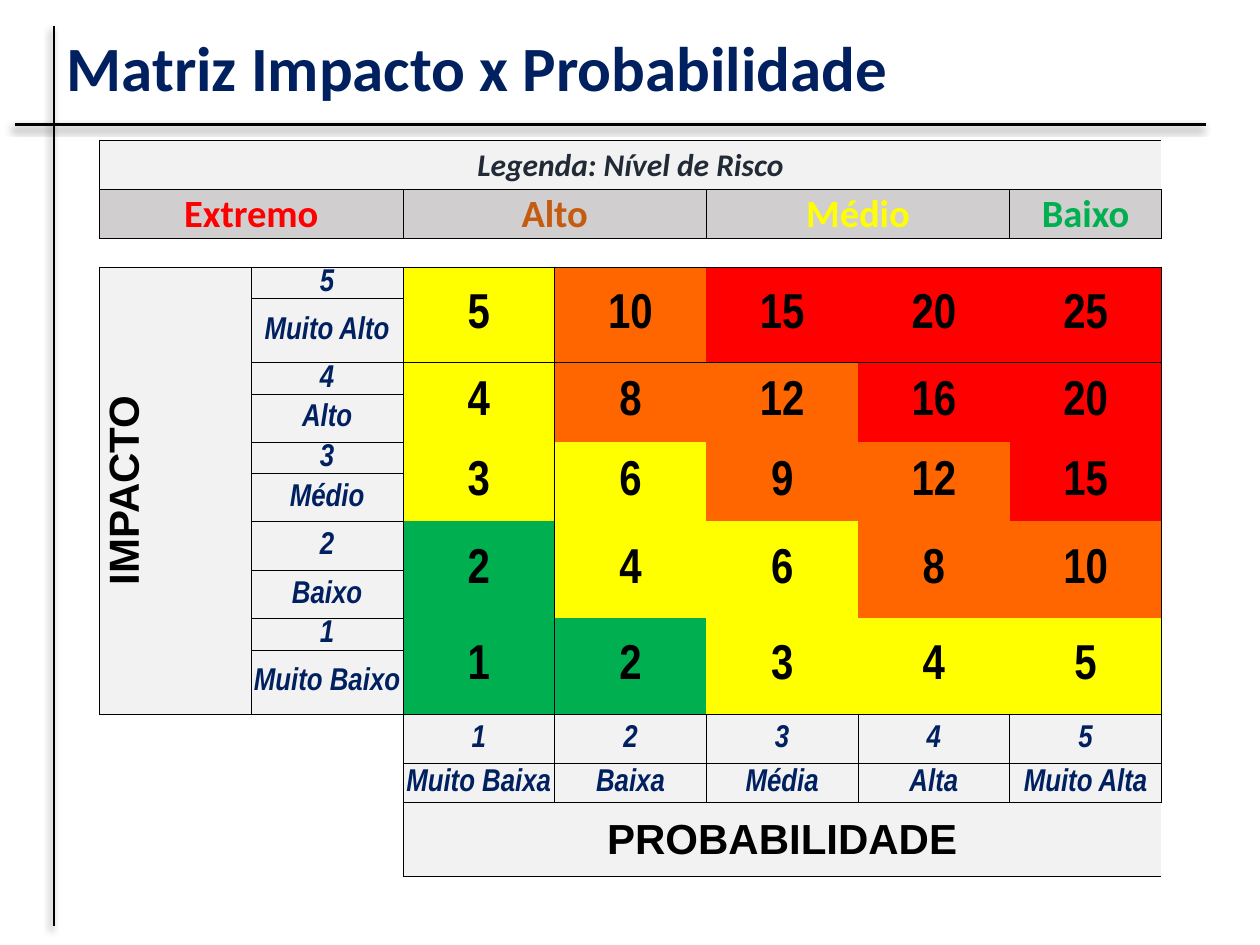
from lxml.etree import SubElement
from pptx import Presentation
from pptx.dml.color import RGBColor
from pptx.enum.shapes import MSO_CONNECTOR
from pptx.enum.text import MSO_ANCHOR, MSO_AUTO_SIZE, PP_ALIGN
from pptx.oxml.ns import qn
from pptx.util import Inches, Pt

COLORS = {
    "black": "000000", "navy": "002060", "legend": "222A35",
    "light": "F2F2F2", "grey": "D0CECE", "rust": "C55A11",
    "red": "FF0000", "orange": "FF6600", "yellow": "FFFF00", "green": "00B050",
}
FORMATS = {
    "title": dict(name="Calibri", size=Pt(36), bold=True, color="navy"),
    "legend": dict(name="Calibri", size=Pt(18), bold=True, italic=True, color="legend"),
    "risk": dict(name="Calibri", size=Pt(22), bold=True),
    "axis": dict(name="Arial", size=Pt(24), bold=True, color="black"),
    "label": dict(name="Arial Narrow", size=Pt(18), bold=True, italic=True, color="navy"),
    "score": dict(name="Arial Narrow", size=Pt(28), bold=True, color="black"),
}
NO_STYLE = "{2D5ABB26-0587-4C30-8999-92F81FD0307C}"
ROW_HEIGHTS = [0.39, 0.38, 0.23, 0.25, 0.51, 0.25, 0.38, 0.25,
               0.38, 0.39, 0.38, 0.25, 0.51, 0.39, 0.31, 0.59]
RISK_LEVELS = [("Extremo", "red", 2), ("Alto", "rust", 2),
               ("Médio", "yellow", 2), ("Baixo", "green", 1)]
IMPACTS = ["Muito Alto", "Alto", "Médio", "Baixo", "Muito Baixo"]
PROBABILITIES = ["Muito Baixa", "Baixa", "Média", "Alta", "Muito Alta"]
MATRIX_ROW, MATRIX_COL = 3, 2


def zone_color(score):
    """Colour of the risk level that a score falls in."""
    limits = [(15, "red"), (8, "orange"), (3, "yellow"), (0, "green")]
    return next(color for limit, color in limits if score >= limit)


class RiskSlide:
    def __init__(self, deck):
        self.width, self.height = deck.slide_width, deck.slide_height
        self.slide = deck.slides.add_slide(deck.slide_layouts[5])

    def place(self, x, y):
        """Turn shares of the slide into lengths."""
        return round(x * self.width), round(y * self.height)

    def style(self, run, format_name, color=None):
        values = dict(FORMATS[format_name])
        color = color or values.pop("color")
        for key, value in values.items():
            setattr(run.font, key, value)
        run.font.color.rgb = RGBColor.from_string(COLORS[color])

    def title(self, text, x, y, width, height):
        title = self.slide.shapes.title
        title.left, title.top = self.place(x, y)
        title.width, title.height = self.place(width, height)
        frame = title.text_frame
        frame.auto_size = MSO_AUTO_SIZE.NONE
        frame.vertical_anchor = MSO_ANCHOR.MIDDLE
        paragraph = frame.paragraphs[0]
        paragraph.alignment, paragraph.line_spacing = PP_ALIGN.LEFT, 0.9
        run = paragraph.add_run()
        run.text = text
        self.style(run, "title")

    def rule(self, start, end):
        """Straight line with a soft shadow."""
        line = self.slide.shapes.add_connector(
            MSO_CONNECTOR.STRAIGHT, *self.place(*start), *self.place(*end))
        line.line.width = Pt(1.5)
        line.line.color.rgb = RGBColor.from_string(COLORS["black"])
        effects = SubElement(line._element.spPr, qn("a:effectLst"))
        shadow = SubElement(effects, qn("a:outerShdw"), blurRad=str(Pt(4)),
                            dist=str(Pt(3)), dir="8100000", rotWithShape="0")
        tint = SubElement(shadow, qn("a:srgbClr"), val=COLORS["black"])
        SubElement(tint, qn("a:alpha"), val="40000")

    def table(self, x, y, width, height, columns, row_heights):
        size = self.place(width, height)
        frame = self.slide.shapes.add_table(
            len(row_heights), columns, *self.place(x, y), *size)
        self.grid = frame.table
        self.grid.first_row = self.grid.horz_banding = False
        self.grid._tbl.tblPr.find(qn("a:tableStyleId")).text = NO_STYLE
        for row, row_height in zip(self.grid.rows, row_heights):
            row.height = Inches(row_height)
        frame.height = size[1]
        for cell in self.grid.iter_cells():
            cell.margin_left = cell.margin_right = cell.margin_top = Inches(0.01)
            cell.margin_bottom = 0
            cell.vertical_anchor = MSO_ANCHOR.MIDDLE
            cell.fill.background()
            SubElement(cell.text_frame.paragraphs[0]._p, qn("a:endParaRPr"), sz="800")

    def border(self, cell, sides):
        properties = cell._tc.get_or_add_tcPr()
        for position, side in enumerate(s for s in "LRTB" if s in sides):
            line = SubElement(properties, qn(f"a:ln{side}"), w=str(Pt(0.5)))
            fill = SubElement(line, qn("a:solidFill"))
            SubElement(fill, qn("a:srgbClr"), val=COLORS["black"])
            properties.insert(position, line)

    def block(self, row, col, text, format_name, fill, color=None,
              rows=1, cols=1, sides="LRTB"):
        """Fill a cell or merged area and draw the given outer sides."""
        last_row, last_col = row + rows - 1, col + cols - 1
        origin = self.grid.cell(row, col)
        if rows * cols > 1:
            origin.merge(self.grid.cell(last_row, last_col))
        for r in range(row, last_row + 1):
            for c in range(col, last_col + 1):
                outer = {"L": c == col, "R": c == last_col,
                         "T": r == row, "B": r == last_row}
                cell = self.grid.cell(r, c)
                self.border(cell, [s for s in sides if outer[s]])
                cell.fill.solid()
                cell.fill.fore_color.rgb = RGBColor.from_string(COLORS[fill])
        paragraph = origin.text_frame.paragraphs[0]
        paragraph.alignment = PP_ALIGN.CENTER
        run = paragraph.add_run()
        run.text = text
        self.style(run, format_name, color)
        return origin

    def label(self, row, col, number, name):
        """Number above its name, in one box over two rows."""
        self.block(row, col, str(number), "label", "light", sides="LRT")
        self.block(row + 1, col, name, "label", "light", sides="LRB")


def main():
    deck = Presentation()
    deck.slide_width, deck.slide_height = Inches(10), Inches(7.5)
    page = RiskSlide(deck)
    page.rule((0.043, 0.028), (0.043, 0.98))
    page.rule((0.012, 0.132), (0.957, 0.132))
    page.title("Matriz Impacto x Probabilidade", 0.043, 0.017, 0.945, 0.116)
    page.table(0.079, 0.149, 0.843, 0.808, 7, ROW_HEIGHTS)

    page.block(0, 0, "Legenda: Nível de Risco", "legend", "light", cols=7)
    col = 0
    for name, color, span in RISK_LEVELS:
        page.block(1, col, name, "risk", "grey", color, cols=span)
        col += span

    size = len(IMPACTS)
    impact_axis = page.block(MATRIX_ROW, 0, "IMPACTO", "axis", "light", rows=2 * size)
    impact_axis._tc.get_or_add_tcPr().set("vert", "vert270")
    for i, impact in enumerate(IMPACTS):
        row, level = MATRIX_ROW + 2 * i, size - i
        page.label(row, 1, level, impact)
        for j in range(size):
            score = level * (j + 1)
            edges = {"L": j == 0, "R": j == size - 1, "T": i == 0, "B": i == size - 1}
            page.block(row, MATRIX_COL + j, str(score), "score", zone_color(score),
                       rows=2, sides=[s for s in edges if edges[s]])

    label_row = MATRIX_ROW + 2 * size
    for j, probability in enumerate(PROBABILITIES):
        page.label(label_row, MATRIX_COL + j, j + 1, probability)
    page.block(label_row + 2, MATRIX_COL, "PROBABILIDADE", "axis", "light", cols=size)
    deck.save("out.pptx")


if __name__ == "__main__":
    main()
